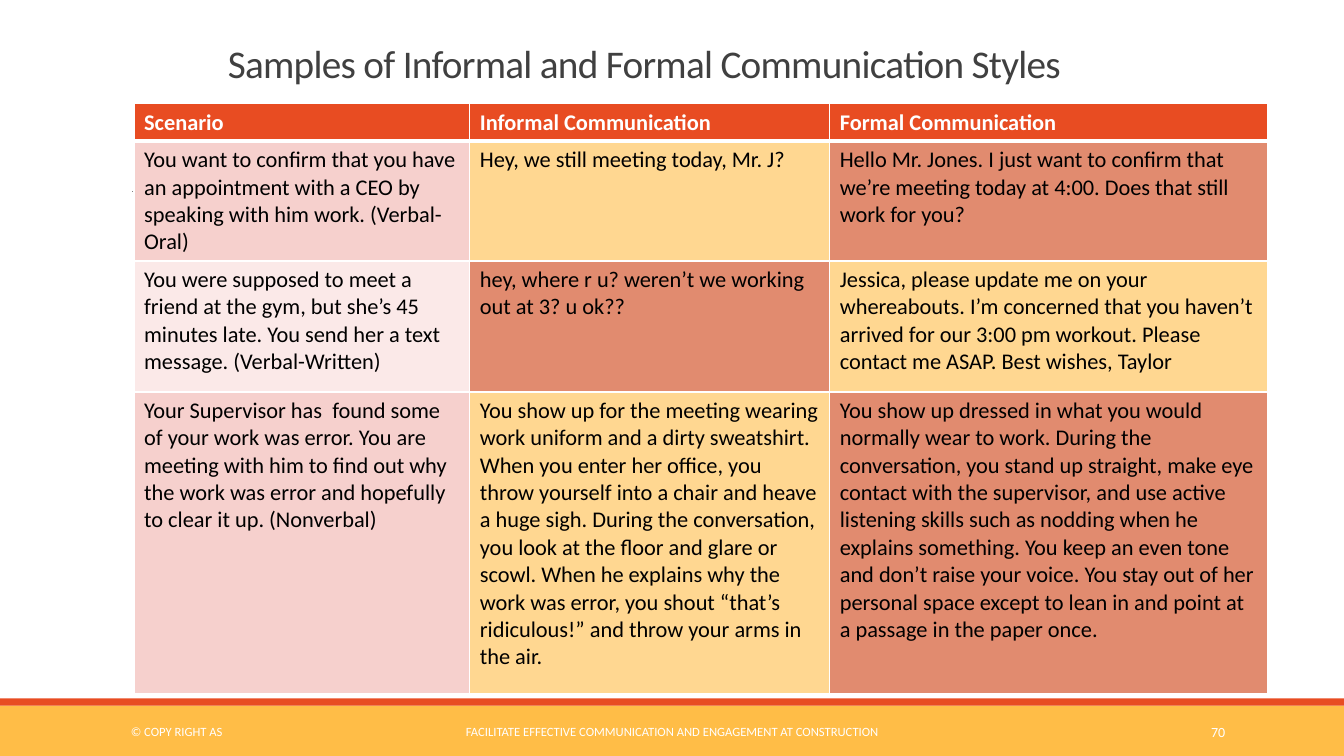
import pptx
import pptx.util
import pptx.dml.color
import pptx.enum.shapes
import pptx.enum.text
import pptx.oxml
import pptx.oxml.ns

Inches = pptx.util.Inches
Pt = pptx.util.Pt
RGBColor = pptx.dml.color.RGBColor
Align = pptx.enum.text.PP_ALIGN
Anchor = pptx.enum.text.MSO_ANCHOR

WHITE = RGBColor(0xFF, 0xFF, 0xFF)
BLACK = RGBColor(0, 0, 0)
DARK = RGBColor(0x40, 0x40, 0x40)
GRAY = RGBColor(0x80, 0x80, 0x80)
RED = RGBColor(0xE8, 0x4C, 0x22)
AMBER = RGBColor(0xFF, 0xBD, 0x47)
ROSE = RGBColor(0xF6, 0xD0, 0xCD)
PALE = RGBColor(0xFB, 0xE9, 0xE8)
SAND = RGBColor(0xFF, 0xD7, 0x91)
CORAL = RGBColor(0xE1, 0x8B, 0x6F)

COLS = [3.33, 3.57, 4.34]
ROWS = [0.37, 1.15, 1.3, 2.99]
FILLS = [
    [RED, RED, RED],
    [ROSE, SAND, CORAL],
    [PALE, CORAL, SAND],
    [ROSE, SAND, CORAL],
]
CELLS = [
    ["Scenario", "Informal Communication", "Formal Communication"],
    ["You want to confirm that you have an appointment with a CEO by "
     "speaking with him work. (Verbal-Oral)",
     "Hey, we still meeting today, Mr. J?",
     "Hello Mr. Jones. I just want to confirm that we’re meeting today "
     "at 4:00. Does that still work for you?"],
    ["You were supposed to meet a friend at the gym, but she’s 45 minutes "
     "late. You send her a text message. (Verbal-Written)",
     "hey, where r u? weren’t we working out at 3? u ok??",
     "Jessica, please update me on your whereabouts. I’m concerned that "
     "you haven’t arrived for our 3:00 pm workout. Please contact me ASAP. "
     "Best wishes, Taylor"],
    ["Your Supervisor has  found some of your work was error. You are "
     "meeting with him to find out why the work was error and hopefully "
     "to clear it up. (Nonverbal)",
     "You show up for the meeting wearing work uniform and a dirty "
     "sweatshirt. When you enter her office, you throw yourself into a "
     "chair and heave a huge sigh. During the conversation, you look at "
     "the floor and glare or scowl. When he explains why the work was "
     "error, you shout “that’s ridiculous!” and throw your arms in the air.",
     "You show up dressed in what you would normally wear to work. During "
     "the conversation, you stand up straight, make eye contact with the "
     "supervisor, and use active listening skills such as nodding when he "
     "explains something. You keep an even tone and don’t raise your voice. "
     "You stay out of her personal space except to lean in and point at a "
     "passage in the paper once."],
]


def write(frame, text, size=16, color=BLACK, bold=False, align=Align.LEFT,
          anchor=Anchor.TOP, space=None, track=None):
    """Fill a text frame with one formatted paragraph."""
    frame.word_wrap = True
    frame.vertical_anchor = anchor
    para = frame.paragraphs[0]
    para.alignment = align
    if space:
        para.line_spacing = space
    run = para.add_run()
    run.text = text
    font = run.font
    font.name = "Calibri"
    font.size = Pt(size)
    font.bold = bold
    font.color.rgb = color
    if track:
        run._r.get_or_add_rPr().set("spc", str(int(track * 100)))


def add_bar(slide, top, height, color):
    bar = slide.shapes.add_shape(
        pptx.enum.shapes.MSO_SHAPE.RECTANGLE,
        0, Inches(top), Inches(13.33), Inches(height))
    bar.shadow.inherit = False
    bar.fill.solid()
    bar.fill.fore_color.rgb = color
    bar.line.fill.background()


def add_rule(slide, left, right, y):
    rule = slide.shapes.add_connector(
        pptx.enum.shapes.MSO_CONNECTOR.STRAIGHT,
        Inches(left), Inches(y), Inches(right), Inches(y))
    rule.line.color.rgb = GRAY
    rule.line.width = Pt(0.5)
    props = rule._element.spPr
    props.append(pptx.oxml.parse_xml(
        "<a:effectLst %s/>" % pptx.oxml.ns.nsdecls("a")))


def add_title(slide, text):
    title = slide.shapes.title
    title.left, title.top = Inches(2.16), Inches(0.13)
    title.width, title.height = Inches(9), Inches(0.78)
    write(title.text_frame, text, size=28, color=DARK,
          anchor=Anchor.BOTTOM, space=0.85, track=-0.5)


def add_note(slide, left, width, text, size=9, align=Align.LEFT):
    box = slide.shapes.add_textbox(
        Inches(left), Inches(7.06), Inches(width), Inches(0.4))
    write(box.text_frame, text, size=size, color=WHITE, align=align,
          anchor=Anchor.MIDDLE)


def add_edges(cell, widths):
    """Draw white cell borders; widths maps a side to points."""
    props = cell._tc.get_or_add_tcPr()
    for side in "LRTB":
        props.append(pptx.oxml.parse_xml(
            '<a:ln%s %s w="%d"><a:solidFill><a:srgbClr val="%s"/>'
            "</a:solidFill></a:ln%s>" % (
                side, pptx.oxml.ns.nsdecls("a"), Pt(widths[side]),
                WHITE, side)))


def add_grid(slide):
    grid = slide.shapes.add_table(
        len(ROWS), len(COLS), Inches(1.33), Inches(1.03),
        Inches(sum(COLS)), Inches(sum(ROWS))).table
    for col, width in zip(grid.columns, COLS):
        col.width = Inches(width)
    for r, height in enumerate(ROWS):
        grid.rows[r].height = Inches(height)
        head = r == 0
        edges = {"L": 1, "R": 1, "T": 3 if r == 1 else 1,
                 "B": 3 if head else 1}
        for c, text in enumerate(CELLS[r]):
            cell = grid.cell(r, c)
            add_edges(cell, edges)
            cell.fill.solid()
            cell.fill.fore_color.rgb = FILLS[r][c]
            write(cell.text_frame, text, bold=head,
                  color=WHITE if head else BLACK)


def main():
    deck = pptx.Presentation()
    deck.slide_width, deck.slide_height = Inches(13.33), Inches(7.5)
    slide = deck.slides.add_slide(deck.slide_layouts[5])

    # Bands and rule
    add_bar(slide, 7, 0.5, AMBER)
    add_bar(slide, 6.93, 0.07, RED)
    add_rule(slide, 1.31, 12.2, 1.9)

    # Title and table
    add_title(slide, "Samples of Informal and Formal Communication Styles")
    add_grid(slide)

    # Footer
    add_note(slide, 1.2, 2.7, "© COPY RIGHT AS")
    add_note(slide, 4.03, 5.27,
             "FACILITATE EFFECTIVE COMMUNICATION AND ENGAGEMENT "
             "AT CONSTRUCTION", align=Align.CENTER)
    add_note(slide, 10.82, 1.43, "70", size=10, align=Align.RIGHT)

    deck.save("out.pptx")


if __name__ == "__main__":
    main()
